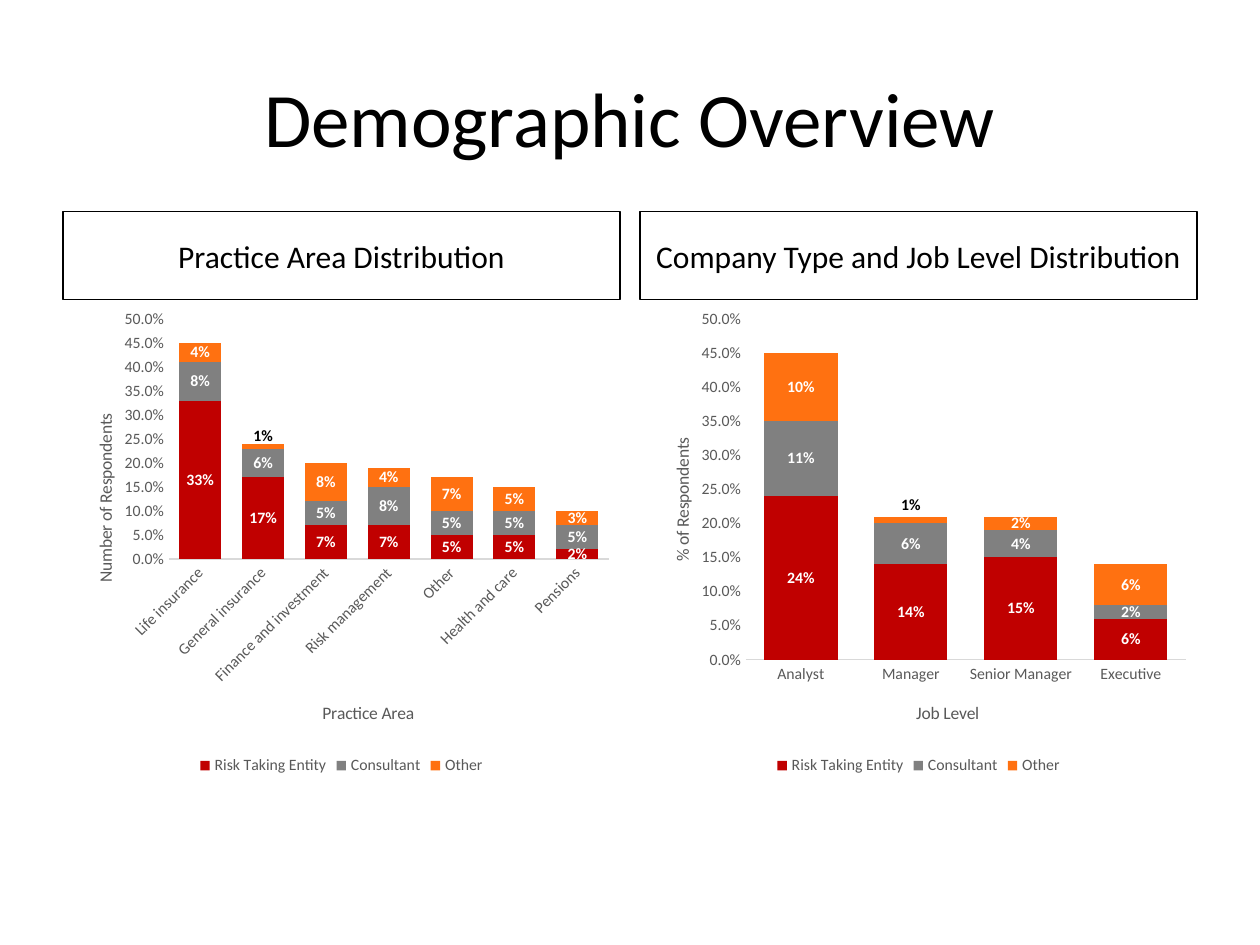
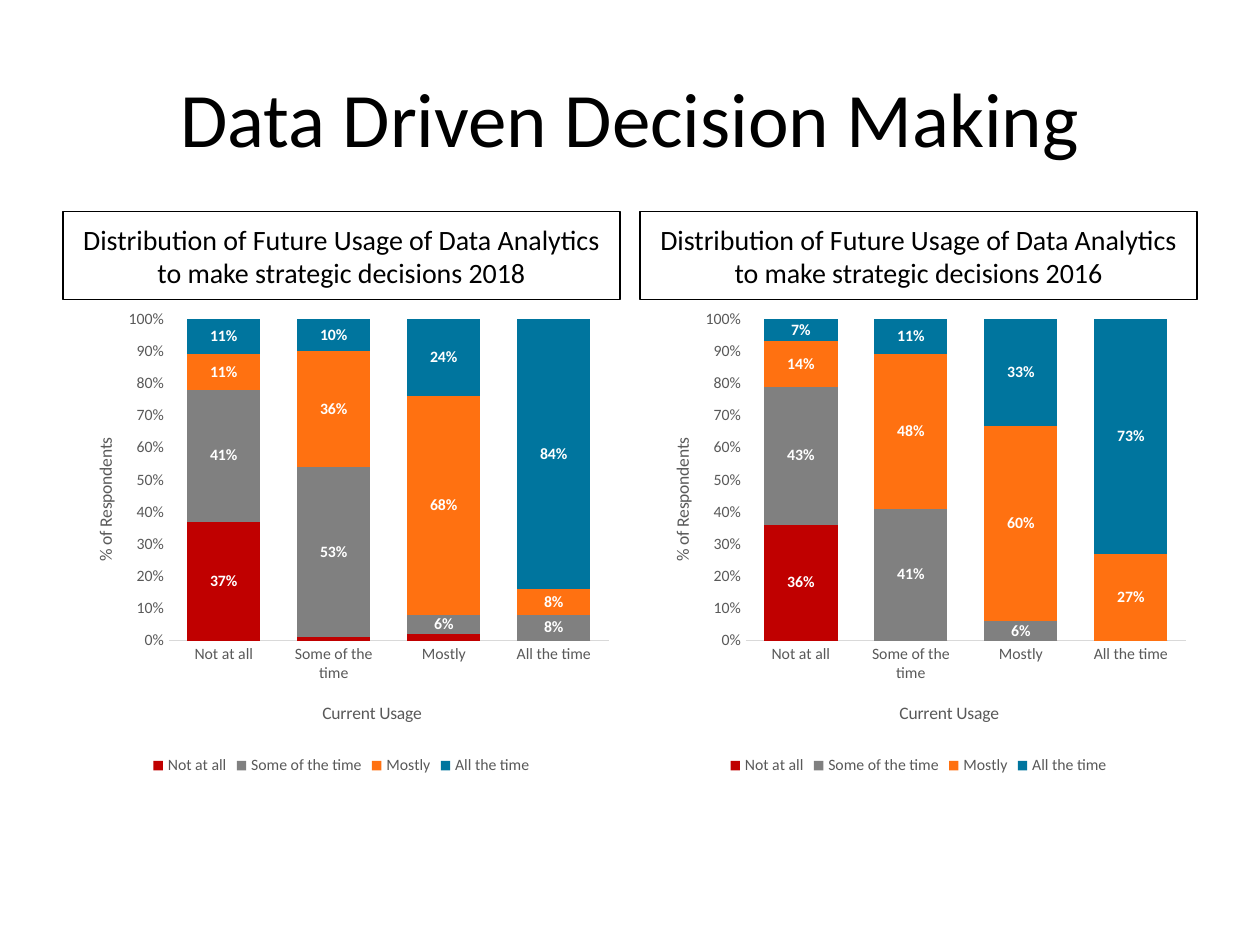
import pptx
import pptx.chart.data
import pptx.dml.color
import pptx.enum.chart
import pptx.enum.shapes
import pptx.enum.text
import pptx.oxml
import pptx.oxml.ns
import pptx.util

Inches = pptx.util.Inches
FONT = "Calibri"
BLACK, WHITE, GREY, PALE = "000000", "FFFFFF", "595959", "D9D9D9"
SERIES_COLOURS = ["C00000", "808080", "FF7111", "00759E"]
COLUMN_LEFTS = [0.5, 5.08]
COLUMN_WIDTH = 4.42
NAMESPACE = 'xmlns:c="http://schemas.openxmlformats.org/drawingml/2006/chart"'


def colour(value):
    return pptx.dml.color.RGBColor.from_string(value)


def set_font(font, size, value, bold=False):
    formats = {"name": FONT, "size": pptx.util.Pt(size), "bold": bold}
    for name, setting in formats.items():
        setattr(font, name, setting)
    font.color.rgb = colour(value)


def set_layout(parent, index, **places):
    """Give a chart part a manual layout, as fractions of the chart."""
    for layout in parent.findall(pptx.oxml.ns.qn("c:layout")):
        parent.remove(layout)
    items = "".join(f'<c:{name} val="{value}"/>' for name, value in places.items())
    parent.insert(index, pptx.oxml.parse_xml(
        f"<c:layout {NAMESPACE}><c:manualLayout>{items}</c:manualLayout></c:layout>"))


def rotate(element, degrees):
    body = element.find(".//" + pptx.oxml.ns.qn("a:bodyPr"))
    body.set("rot", str(degrees * 60000))
    body.set("vert", "horz")


class SurveyDeck:
    def __init__(self):
        self.deck = pptx.Presentation()
        self.deck.slide_width, self.deck.slide_height = Inches(10), Inches(7.5)
        self.page = None

    def add_page(self, title):
        self.page = self.deck.slides.add_slide(self.deck.slide_layouts[6])
        box = self.page.shapes.add_textbox(
            Inches(0.5), Inches(0.3), Inches(9), Inches(1.25))
        self.add_text(box, title, 44)

    def add_text(self, box, text, size):
        frame = box.text_frame
        frame.word_wrap = True
        frame.vertical_anchor = pptx.enum.text.MSO_ANCHOR.MIDDLE
        para = frame.paragraphs[0]
        para.alignment = pptx.enum.text.PP_ALIGN.CENTER
        span = para.add_run()
        span.text = text
        set_font(span.font, size, BLACK)

    def add_heading(self, left, text, size):
        box = self.page.shapes.add_shape(
            pptx.enum.shapes.MSO_SHAPE.RECTANGLE,
            Inches(left), Inches(1.68), Inches(COLUMN_WIDTH), Inches(0.7))
        box.shadow.inherit = False
        box.fill.background()
        box.line.color.rgb = colour(BLACK)
        box.line.width = pptx.util.Pt(0.75)
        self.add_text(box, text, size)

    def add_chart(self, left, panel, percent):
        data = pptx.chart.data.CategoryChartData(number_format="0%")
        data.categories = panel["categories"]
        for name, values in panel["series"].items():
            data.add_series(name, values)
        kinds = pptx.enum.chart.XL_CHART_TYPE
        chart = self.page.shapes.add_chart(
            kinds.COLUMN_STACKED_100 if percent else kinds.COLUMN_STACKED,
            Inches(left), Inches(2.38), Inches(COLUMN_WIDTH), Inches(3.81), data).chart
        set_font(chart.font, 10, BLACK)
        chart.has_title = False
        chart.has_legend = True
        chart.legend.position = pptx.enum.chart.XL_LEGEND_POSITION.BOTTOM
        chart.legend.include_in_layout = False
        set_font(chart.legend.font, 9, GREY)

        plot = chart.plots[0]
        plot.gap_width, plot.overlap, plot.vary_by_categories = 50, 100, False
        for series, fill in zip(plot.series, SERIES_COLOURS):
            series.format.fill.solid()
            series.format.fill.fore_color.rgb = colour(fill)
            self.label_series(series, percent, panel.get("lift"))

        self.style_axes(chart, panel, percent)
        area = chart.element.find(".//" + pptx.oxml.ns.qn("c:plotArea"))
        set_layout(area, 0, layoutTarget="inner", xMode="edge", yMode="edge",
                   x=0.19, y=0.04, w=0.79, h=panel["plot_height"])

    def style_axes(self, chart, panel, percent):
        category, value = chart.category_axis, chart.value_axis
        value.minimum_scale = 0
        value.maximum_scale = 1 if percent else 0.5
        value.major_unit = 0.1 if percent else 0.05
        value.tick_labels.number_format = "0%" if percent else "0.0%"
        value.tick_labels.number_format_is_linked = False
        value.format.line.fill.background()
        category.format.line.color.rgb = colour(PALE)
        category.format.line.width = pptx.util.Pt(0.75)
        none = pptx.enum.chart.XL_TICK_MARK.NONE
        titles = [(category, panel["category_title"]), (value, panel["value_title"])]
        for axis, (text, x, y) in titles:
            axis.has_major_gridlines = False
            axis.major_tick_mark = axis.minor_tick_mark = none
            set_font(axis.tick_labels.font, 9, GREY)
            title = axis.axis_title
            title.text_frame.text = text
            set_font(title.text_frame.paragraphs[0].runs[0].font, 10, GREY)
            set_layout(title._element, 1, xMode="edge", yMode="edge", x=x, y=y)
        rotate(value.axis_title._element, -90)
        if panel.get("slanted"):
            rotate(category._element.find(pptx.oxml.ns.qn("c:txPr")), -45)

    def label_series(self, series, percent, lift):
        labels = series.data_labels
        labels.show_value = True
        labels.number_format = "0%"
        labels.number_format_is_linked = False
        labels.position = pptx.enum.chart.XL_LABEL_POSITION.CENTER
        set_font(labels.font, 9, WHITE, True)
        holder = labels._element
        hidden = 0
        for index, amount in enumerate(series.values):
            # Thin parts: no label in percent charts, a raised one elsewhere
            if percent and amount < 0.05:
                holder.insert(hidden, pptx.oxml.parse_xml(
                    f'<c:dLbl {NAMESPACE}><c:idx val="{index}"/>'
                    '<c:delete val="1"/></c:dLbl>'))
                hidden += 1
            elif amount == 0.01:
                set_font(series.points[index].data_label.font, 9, BLACK, True)
                label = holder.find(pptx.oxml.ns.qn("c:dLbl"))
                label.insert(1, pptx.oxml.parse_xml(
                    f'<c:numFmt {NAMESPACE} formatCode="0%" sourceLinked="0"/>'))
                set_layout(label, 1, x=0, y=lift)


USAGE = ["Not at all", "Some of the time", "Mostly", "All the time"]
COMPANIES = ["Risk Taking Entity", "Consultant", "Other"]


def usage_panel(year, *rows):
    return {
        "heading": "Distribution of Future Usage of Data Analytics "
                   f"to make strategic decisions {year}",
        "categories": USAGE, "series": dict(zip(USAGE, rows)), "plot_height": 0.67,
        "category_title": ("Current Usage", 0.46, 0.83),
        "value_title": ("% of Respondents", 0.05, 0.28),
    }


PRACTICE_AREA = {
    "heading": "Practice Area Distribution",
    "categories": ["Life insurance", "General insurance", "Finance and investment",
                   "Risk management", "Other", "Health and care", "Pensions"],
    "series": dict(zip(COMPANIES, [
        [0.33, 0.17, 0.07, 0.07, 0.05, 0.05, 0.02],
        [0.08, 0.06, 0.05, 0.08, 0.05, 0.05, 0.05],
        [0.04, 0.01, 0.08, 0.04, 0.07, 0.05, 0.03]])),
    "plot_height": 0.5, "slanted": True, "lift": -0.02,
    "category_title": ("Practice Area", 0.46, 0.83),
    "value_title": ("Number of Respondents", 0.05, 0.23),
}
JOB_LEVEL = {
    "heading": "Company Type and Job Level Distribution",
    "categories": ["Analyst", "Manager", "Senior Manager", "Executive"],
    "series": dict(zip(COMPANIES, [
        [0.24, 0.14, 0.15, 0.06],
        [0.11, 0.06, 0.04, 0.02],
        [0.1, 0.01, 0.02, 0.06]])),
    "plot_height": 0.71, "lift": -0.03,
    "category_title": ("Job Level", 0.49, 0.83),
    "value_title": ("% of Respondents", 0.05, 0.28),
}
USAGE_2018 = usage_panel(
    2018, [0.37, 0.01, 0.02, 0], [0.41, 0.53, 0.06, 0.08],
    [0.11, 0.36, 0.68, 0.08], [0.11, 0.1, 0.24, 0.84])
USAGE_2016 = usage_panel(
    2016, [0.36, 0, 0, 0], [0.43, 0.41, 0.06, 0],
    [0.14, 0.48, 0.6, 0.27], [0.07, 0.11, 0.33, 0.73])

# Title, heading size, whether bars fill 100%, panels from left to right
PAGES = [
    ("Demographic Overview", 18, False, [PRACTICE_AREA, JOB_LEVEL]),
    ("Data Driven Decision Making", 16, True, [USAGE_2018, USAGE_2016]),
]


def main():
    survey = SurveyDeck()
    for title, heading_size, percent, panels in PAGES:
        survey.add_page(title)
        for left, panel in zip(COLUMN_LEFTS, panels):
            survey.add_heading(left, panel["heading"], heading_size)
            survey.add_chart(left, panel, percent)
    survey.deck.save("out.pptx")


if __name__ == "__main__":
    main()
